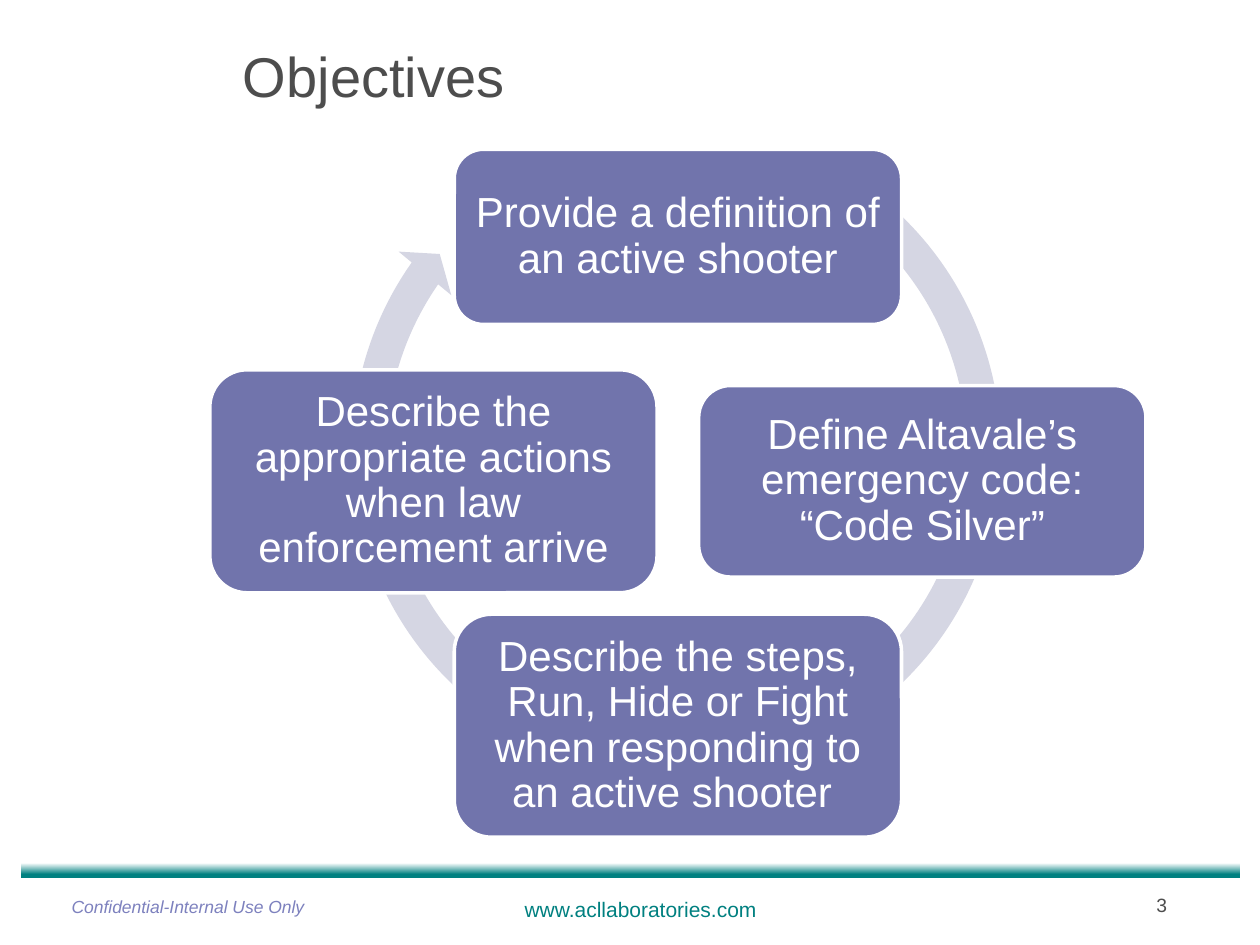
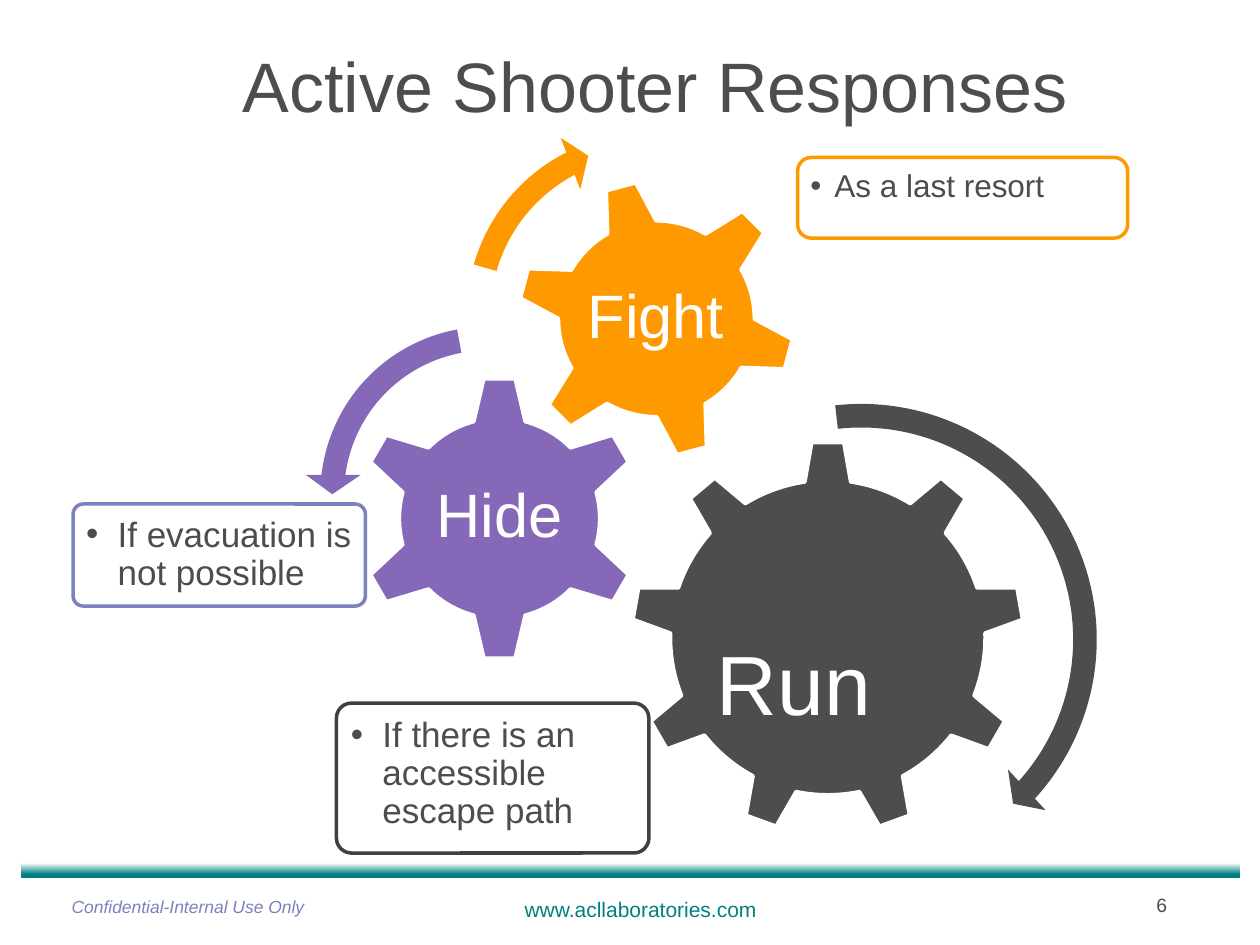
from typing import NamedTuple

from lxml import etree
from pptx import Presentation
from pptx.dml.color import RGBColor
from pptx.enum.shapes import MSO_SHAPE
from pptx.enum.text import MSO_ANCHOR, PP_ALIGN
from pptx.oxml.ns import qn
from pptx.util import Inches, Pt

RECTANGLE, ROUNDED = MSO_SHAPE.RECTANGLE, MSO_SHAPE.ROUNDED_RECTANGLE
GEAR_6, GEAR_9 = MSO_SHAPE.GEAR_6, MSO_SHAPE.GEAR_9
CLOCKWISE, COUNTER = MSO_SHAPE.CIRCULAR_ARROW, MSO_SHAPE.LEFT_CIRCULAR_ARROW
TOP, MIDDLE = MSO_ANCHOR.TOP, MSO_ANCHOR.MIDDLE
LEFT, CENTER = PP_ALIGN.LEFT, PP_ALIGN.CENTER

# Shared look
FONT = "Arial"
WHITE, GRAY, CHARCOAL = "FFFFFF", "4D4D4D", "404040"
TEAL, LAVENDER, INDIGO, MIST = "008080", "7D81BE", "7174AC", "D5D6E3"
PURPLE, ORANGE = "8568B8", "FF9900"
LINE_WIDTH = 2
TIGHT = 0.9
ANGLE_UNIT = 0.6  # adjustment value of one degree


class Area(NamedTuple):
    left: float
    top: float
    width: float
    height: float


class Style(NamedTuple):
    size: float
    color: str = GRAY
    align: int = CENTER
    anchor: int = TOP
    inset: tuple = (0.1, 0.05)
    spacing: float = 1.0
    italic: bool = False
    bullet_indent: float = 0


class Objective(NamedTuple):
    text: str
    height: float
    across: int
    down: int


class Gear(NamedTuple):
    kind: int
    area: Area
    color: str
    rotation: float
    label: str
    label_area: Area
    label_size: float


class Note(NamedTuple):
    text: str
    area: Area
    color: str
    corner: float
    size: float
    indent: float
    inset: float


class Arrow(NamedTuple):
    kind: int
    left: float
    top: float
    size: float
    color: str
    thickness: float
    head_angle: float
    end: float
    start: float
    head_width: float
    rotation: float = 0


OBJECTIVE_HUB = (5.38, 3.82)
OBJECTIVE_RADIUS = 1.94
OBJECTIVE_WIDTH = 3.55
OBJECTIVES = [
    Objective("Provide a definition of an active shooter", 1.39, 0, -1),
    Objective("Define Altavale’s emergency code: “Code Silver”", 1.52, 1, 0),
    Objective("Describe the steps, Run, Hide or Fight when responding to "
              "an active shooter ", 1.77, 0, 1),
    Objective("Describe the appropriate actions when law enforcement arrive",
              1.77, -1, 0),
]
OBJECTIVE_ARROW = Arrow(CLOCKWISE, 2.66, 0.86, 5.42, MIST,
                        0.05, 4.55, 215.03, 299.72, 0.05)

GEARS = [
    Gear(GEAR_9, Area(5.01, 3.5, 3.12, 3.12), GRAY, 0,
         "Run", Area(5.37, 5.06, 1.86, 0.8), 48),
    Gear(GEAR_6, Area(2.83, 2.98, 2.27, 2.27), PURPLE, 0,
         "Hide", Area(3.4, 3.55, 1.13, 1.12), 35),
    Gear(GEAR_6, Area(4.1, 1.42, 2.22, 2.22), ORANGE, 345,
         "Fight", Area(4.58, 1.9, 1.25, 1.25), 35),
]
NOTES = [
    Note("If there is an accessible escape path",
         Area(2.67, 5.58, 2.48, 1.19), CHARCOAL, 0.1, 20, 0.25, 0.08),
    Note("If evacuation is not possible",
         Area(0.58, 4, 2.32, 0.81), LAVENDER, 0.1, 20, 0.25, 0.08),
    Note("As a last resort",
         Area(6.33, 1.25, 2.62, 0.64), ORANGE, 0.17, 18, 0.19, 0.07),
]
RESPONSE_ARROWS = [
    Arrow(CLOCKWISE, 4.84, 3.08, 3.99, GRAY,
          0.047, 4.98, 42.26, 263.67, 0.055),
    Arrow(COUNTER, 2.42, 2.47, 2.9, PURPLE,
          0.065, 7.17, 174.82, 247.3, 0.075, 12.2),
    Arrow(CLOCKWISE, 3.58, 0.93, 3.13, ORANGE,
          0.06, 6.57, 221.9, 175.14, 0.07, 20.8),
]


def rgb(color: str) -> RGBColor:
    return RGBColor.from_string(color)


def place(area: Area) -> list:
    return [Inches(value) for value in area]


def write(box, text: str, style: Style) -> None:
    """Put one formatted paragraph into a box."""
    frame = box.text_frame
    across, down = (Inches(value) for value in style.inset)
    frame_format = {"word_wrap": True, "vertical_anchor": style.anchor,
                    "margin_left": across, "margin_right": across,
                    "margin_top": down, "margin_bottom": down}
    for name, value in frame_format.items():
        setattr(frame, name, value)
    para = frame.paragraphs[0]
    para.alignment = style.align
    para.line_spacing = style.spacing
    if style.bullet_indent:
        indent = Inches(style.bullet_indent)
        properties = para._p.get_or_add_pPr()
        properties.set("marL", str(indent))
        properties.set("indent", str(-indent))
        etree.SubElement(properties, qn("a:buFont")).set("typeface", FONT)
        etree.SubElement(properties, qn("a:buChar")).set("char", "•")
    span = para.add_run()
    span.text = text
    span_format = {"name": FONT, "size": Pt(style.size), "italic": style.italic}
    for name, value in span_format.items():
        setattr(span.font, name, value)
    span.font.color.rgb = rgb(style.color)


def add_text(page, area: Area, text: str, style: Style) -> None:
    write(page.shapes.add_textbox(*place(area)), text, style)


def add_figure(page, kind: int, area: Area, fill: str, line: str = "",
               rotation: float = 0):
    figure = page.shapes.add_shape(kind, *place(area))
    figure.shadow.inherit = False
    figure.rotation = rotation
    figure.fill.solid()
    figure.fill.fore_color.rgb = rgb(fill)
    if line:
        figure.line.color.rgb = rgb(line)
        figure.line.width = Pt(LINE_WIDTH)
    else:
        figure.line.fill.background()
    return figure


def add_arrow(page, arrow: Arrow) -> None:
    area = Area(arrow.left, arrow.top, arrow.size, arrow.size)
    figure = add_figure(page, arrow.kind, area, arrow.color,
                        rotation=arrow.rotation)
    angles = [angle * ANGLE_UNIT
              for angle in (arrow.head_angle, arrow.end, arrow.start)]
    values = [arrow.thickness, *angles, arrow.head_width]
    for index, value in enumerate(values):
        figure.adjustments[index] = value


def add_objective(page, objective: Objective) -> None:
    center_x = OBJECTIVE_HUB[0] + objective.across * OBJECTIVE_RADIUS
    center_y = OBJECTIVE_HUB[1] + objective.down * OBJECTIVE_RADIUS
    area = Area(center_x - OBJECTIVE_WIDTH / 2, center_y - objective.height / 2,
                OBJECTIVE_WIDTH, objective.height)
    card = add_figure(page, ROUNDED, area, INDIGO, WHITE)
    write(card, objective.text, Style(24, WHITE, anchor=MIDDLE,
                                      inset=(0.1, 0.1), spacing=TIGHT))


def add_gear(page, gear: Gear) -> None:
    add_figure(page, gear.kind, gear.area, gear.color, WHITE, gear.rotation)
    add_text(page, gear.label_area, gear.label,
             Style(gear.label_size, WHITE, anchor=MIDDLE,
                   inset=(0.05, 0.05), spacing=TIGHT))


def add_note(page, note: Note) -> None:
    card = add_figure(page, ROUNDED, note.area, WHITE, note.color)
    card.adjustments[0] = note.corner
    write(card, note.text, Style(note.size, align=LEFT,
                                 inset=(note.inset, note.inset),
                                 spacing=TIGHT, bullet_indent=note.indent))


def add_page(deck, title: str, title_top: float, title_size: float,
             number: int):
    """Add a page with its title, footer band and footer texts."""
    page = deck.slides.add_slide(deck.slide_layouts[6])
    band = add_figure(page, RECTANGLE, Area(0.17, 6.85, 9.67, 0.12), TEAL)
    band.fill.gradient()
    band.fill.gradient_angle = 270
    stops = [(0, WHITE), (0.74, TEAL)]
    for stop, (position, color) in zip(band.fill.gradient_stops, stops):
        stop.position = position
        stop.color.rgb = rgb(color)
    add_text(page, Area(3.58, 7.07, 3.01, 0.3), "www.acllaboratories.com",
             Style(12, TEAL))
    add_text(page, Area(9.08, 7.04, 0.51, 0.29), str(number),
             Style(11, align=LEFT))
    add_text(page, Area(0, 7.06, 3.02, 0.43), "Confidential-Internal Use Only ",
             Style(10, LAVENDER, italic=True))
    add_text(page, Area(1.83, title_top, 7.83, 0.92), title,
             Style(title_size, align=LEFT, anchor=MIDDLE, spacing=TIGHT))
    return page


def main() -> None:
    deck = Presentation()
    deck.slide_width, deck.slide_height = Inches(10), Inches(7.5)

    # Objectives cycle
    page = add_page(deck, "Objectives", 0.17, 32, 3)
    add_arrow(page, OBJECTIVE_ARROW)
    for objective in OBJECTIVES:
        add_objective(page, objective)

    # Response gears
    page = add_page(deck, "Active Shooter Responses", 0.25, 40, 6)
    for gear, note in zip(GEARS, NOTES):
        add_gear(page, gear)
        add_note(page, note)
    for arrow in RESPONSE_ARROWS:
        add_arrow(page, arrow)

    deck.save("out.pptx")


if __name__ == "__main__":
    main()
